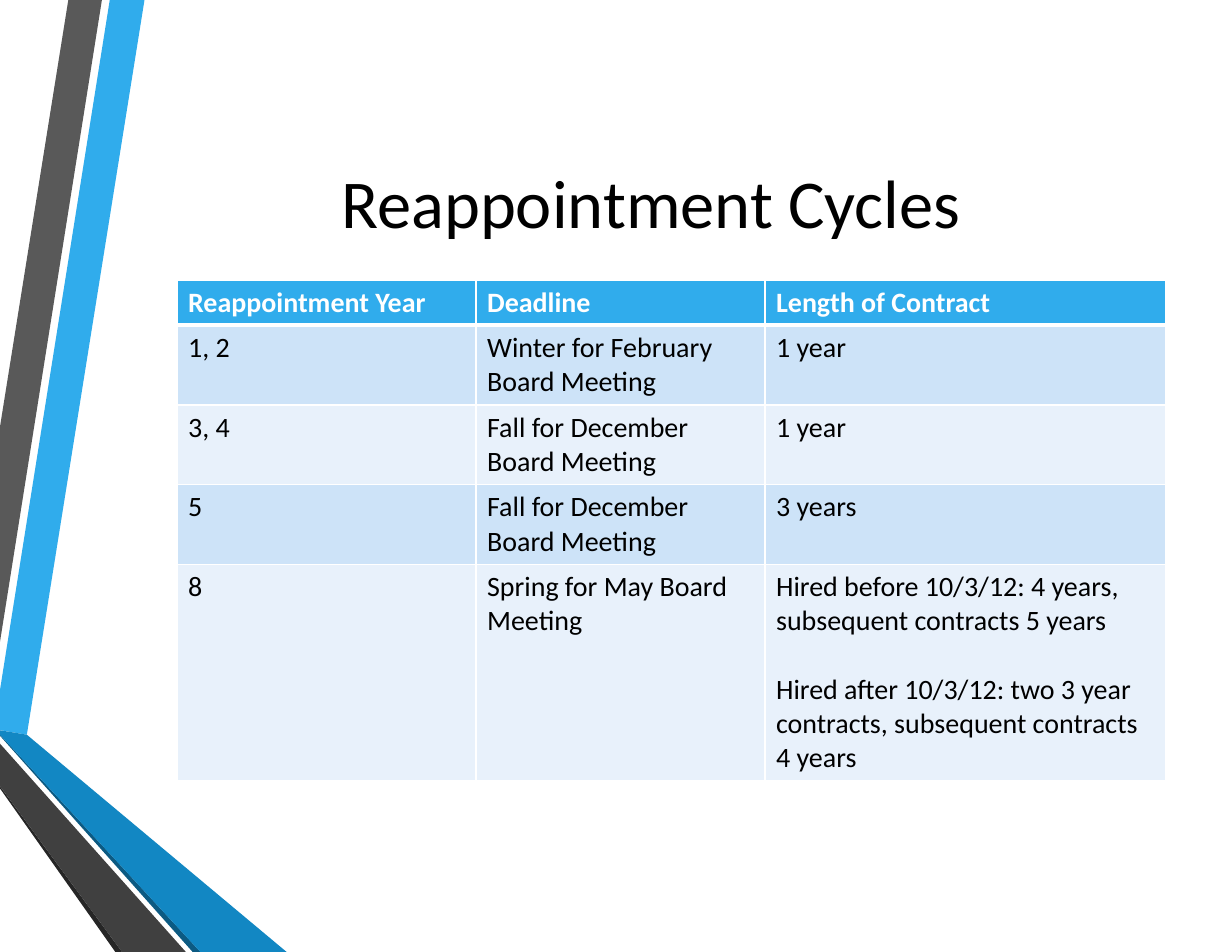
from pptx import Presentation
from pptx.dml.color import RGBColor
from pptx.enum.text import MSO_ANCHOR, MSO_AUTO_SIZE, PP_ALIGN
from pptx.oxml import parse_xml
from pptx.oxml.ns import nsdecls
from pptx.util import Inches, Pt

MIDDLE = MSO_ANCHOR.MIDDLE
CENTER = PP_ALIGN.CENTER
NO_AUTOFIT = MSO_AUTO_SIZE.NONE
TITLE_ONLY = 5
GRID_COLUMNS, GRID_ROWS = 110, 85

RIBBONS = [
    ("30ACEC", [(0, 61.6), (0, 65.2), (2.4, 65.6), (12.9, 0), (9.8, 0)]),
    ("595959", [(9.1, 0), (6.1, 0), (0, 38.1), (0, 57.3)]),
    ("262626", [(0, 70.2), (0, 70.4), (10.3, 85), (10.9, 85)]),
    ("0C5A82", [(0, 65.6), (0, 65.7), (17.2, 85), (17.9, 85)]),
    ("1287C3", [(0, 65.6), (17.9, 85), (25.6, 85), (2.4, 65.6), (0, 65.2)]),
    ("404040", [(0, 70.2), (10.9, 85), (16.6, 85), (0, 66.4)]),
]
CYCLES = [
    ("Reappointment Year", "Deadline", "Length of Contract"),
    ("1, 2", "Winter for February Board Meeting", "1 year"),
    ("3, 4", "Fall for December Board Meeting", "1 year"),
    ("5", "Fall for December Board Meeting", "3 years"),
    ("8", "Spring for May Board Meeting",
     "Hired before 10/3/12: 4 years, subsequent contracts 5 years\n"
     "Hired after 10/3/12: two 3 year contracts, subsequent contracts 4 years"),
]
COLUMN_WIDTHS = [26.7, 25.8, 35.8]
ROW_HEIGHTS = [4, 7.1, 7.1, 7.1, 19.3]


def color(code):
    return RGBColor.from_string(code)


class SlideBuilder:
    font = "Calibri"
    ink, paper = "000000", "FFFFFF"
    header, bands = "30ACEC", ("E8F1FB", "CDE3F8")
    title_size, body_size, line_height = 44, 18, 22
    rule, heavy_rule = 1, 3

    def __init__(self, deck):
        self.page = deck.slides.add_slide(deck.slide_layouts[TITLE_ONLY])
        self.column = deck.slide_width / GRID_COLUMNS
        self.row = deck.slide_height / GRID_ROWS

    def place(self, left, top, width, height):
        return (round(left * self.column), round(top * self.row),
                round(width * self.column), round(height * self.row))

    def style(self, para, size, ink, bold=False):
        para.font.name = self.font
        para.font.size = Pt(size)
        para.font.bold = bold
        para.font.color.rgb = color(ink)

    def ribbon(self, fill, points):
        start, *rest = [(x * 10, y * 10) for x, y in points]
        builder = self.page.shapes.build_freeform(
            *start, scale=(self.column / 10, self.row / 10))
        builder.add_line_segments(rest, close=True)
        shape = builder.convert_to_shape()
        shape.shadow.inherit = False
        shape.fill.solid()
        shape.fill.fore_color.rgb = color(fill)
        shape.line.fill.background()

    def title(self, text, *area):
        box = self.page.shapes.title
        box.left, box.top, box.width, box.height = self.place(*area)
        frame = box.text_frame
        frame.text = text
        frame.auto_size = NO_AUTOFIT
        frame.vertical_anchor = MIDDLE
        para = frame.paragraphs[0]
        para.alignment = CENTER
        self.style(para, self.title_size, self.ink)

    def borders(self, cell, top, bottom):
        properties = cell._tc.get_or_add_tcPr()
        for side, weight in zip("LRTB", (self.rule, self.rule, top, bottom)):
            properties.append(parse_xml(
                f'<a:ln{side} {nsdecls("a")} w="{Pt(weight)}"><a:solidFill>'
                f'<a:srgbClr val="{self.paper}"/></a:solidFill></a:ln{side}>'))

    def cell(self, cell, text, index):
        is_header = index == 0
        self.borders(cell, self.heavy_rule if index == 1 else self.rule,
                     self.heavy_rule if is_header else self.rule)
        cell.fill.solid()
        cell.fill.fore_color.rgb = color(
            self.header if is_header else self.bands[index % 2])
        cell.text = text
        for number, para in enumerate(cell.text_frame.paragraphs):
            self.style(para, self.body_size,
                       self.paper if is_header else self.ink, is_header)
            if number:
                para.space_before = Pt(self.line_height)

    def table(self, rows, left, top, widths, heights):
        area = self.place(left, top, sum(widths), sum(heights))
        table = self.page.shapes.add_table(len(rows), len(widths), *area).table
        for column, width in zip(table.columns, widths):
            column.width = round(width * self.column)
        for index, (row, height) in enumerate(zip(table.rows, heights)):
            row.height = round(height * self.row)
            for cell, text in zip(row.cells, rows[index]):
                self.cell(cell, text, index)


def main():
    deck = Presentation()
    deck.slide_width, deck.slide_height = Inches(11), Inches(8.5)
    slide = SlideBuilder(deck)
    for fill, points in RIBBONS:
        slide.ribbon(fill, points)
    slide.title("Reappointment Cycles", 11.8, 5.7, 92.7, 24.6)
    slide.table(CYCLES, 15.8, 25, COLUMN_WIDTHS, ROW_HEIGHTS)
    deck.save("out.pptx")


if __name__ == "__main__":
    main()
